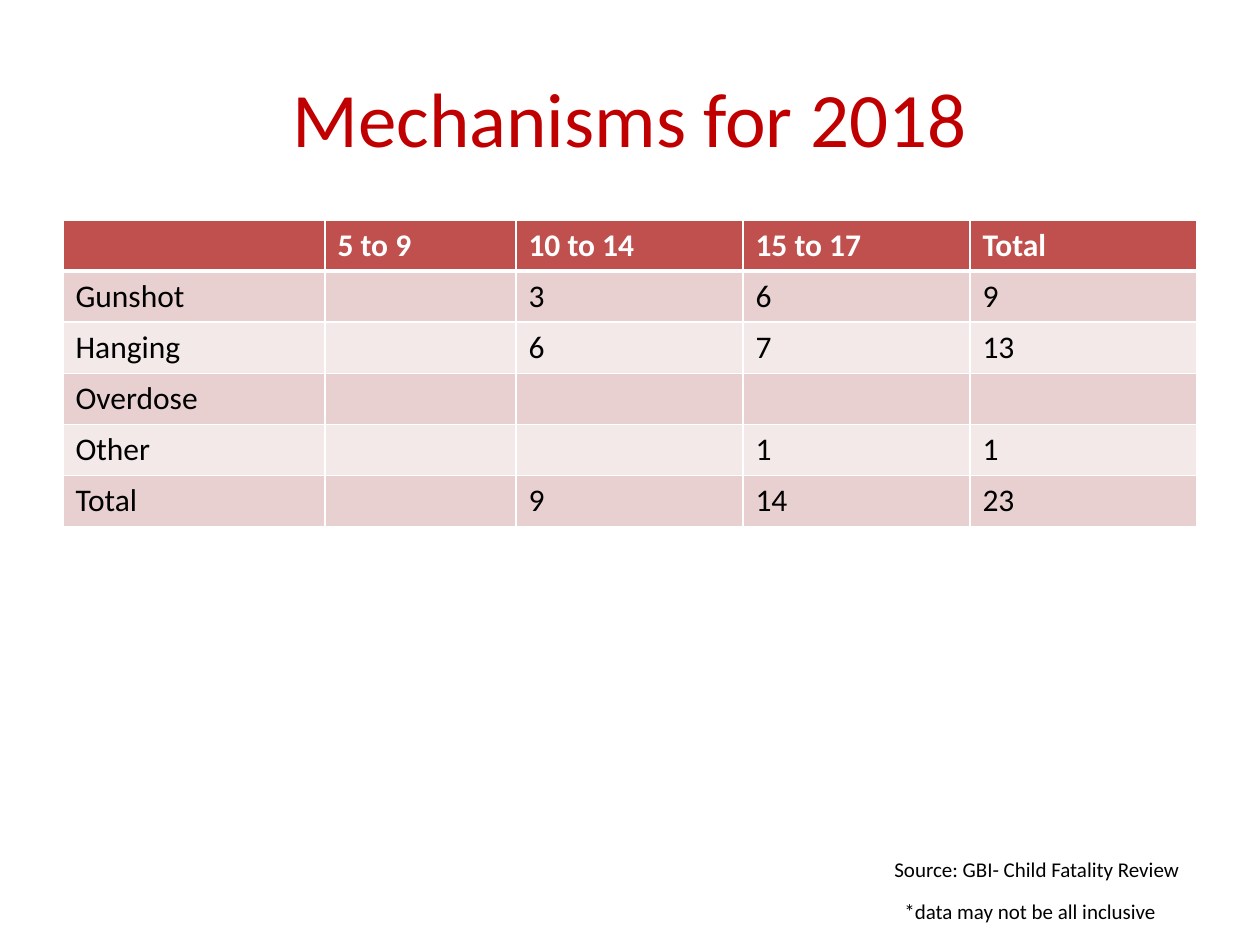
"""Build the slide tabulating mechanisms by age group for 2018."""
from lxml.etree import SubElement
from pptx import Presentation
from pptx.dml.color import RGBColor
from pptx.enum.text import MSO_ANCHOR, PP_ALIGN
from pptx.oxml.ns import qn
from pptx.util import Pt

TITLE = "Mechanisms for 2018"
ROWS = [
    ("", "5 to 9", "10 to 14", "15 to 17", "Total"),
    ("Gunshot", "", "3", "6", "9"),
    ("Hanging", "", "6", "7", "13"),
    ("Overdose", "", "", "", ""),
    ("Other", "", "", "1", "1"),
    ("Total", "", "9", "14", "23"),
]
NOTES = [
    ("*data may not be all inclusive", (892, 892, 315, 38)),
    ("Source: GBI- Child Fatality Review", (882, 850, 451, 62)),
]
COLORS = {
    "title": "C00000", "header": "C0504D", "odd": "E8D0D0",
    "even": "F4E9E9", "white": "FFFFFF", "black": "000000",
}
FONT = "Calibri"
TITLE_BOX = (63, 38, 1134, 158)
TABLE_LEFT, TABLE_TOP, ROW_HEIGHT = 63, 220, 51
COLUMN_WIDTHS = (262, 191, 227, 227, 227)
SCALE = 914400 / 126


def px(length):
    return round(length * SCALE)


def rgb(name):
    return RGBColor.from_string(COLORS[name])


def style(paragraph, size, color, bold=False):
    for run in paragraph.runs:
        run.font.name = FONT
        run.font.size = Pt(size)
        run.font.bold = bold
        run.font.color.rgb = rgb(color)


def add_borders(cell, bottom_width):
    properties = cell._tc.get_or_add_tcPr()
    for side, width in (("L", 1), ("R", 1), ("T", 1), ("B", bottom_width)):
        line = SubElement(properties, qn(f"a:ln{side}"), w=str(Pt(width)))
        fill = SubElement(line, qn("a:solidFill"))
        SubElement(fill, qn("a:srgbClr"), val=COLORS["white"])


def add_title(slide):
    title = slide.shapes.title
    title.left, title.top, title.width, title.height = map(px, TITLE_BOX)
    title.text_frame.text = TITLE
    title.text_frame.vertical_anchor = MSO_ANCHOR.MIDDLE
    heading = title.text_frame.paragraphs[0]
    heading.alignment = PP_ALIGN.CENTER
    style(heading, 44, "title")


def add_mechanisms(slide):
    bounds = (TABLE_LEFT, TABLE_TOP, sum(COLUMN_WIDTHS), ROW_HEIGHT * len(ROWS))
    mechanisms = slide.shapes.add_table(
        len(ROWS), len(COLUMN_WIDTHS), *map(px, bounds)
    ).table
    for column, width in zip(mechanisms.columns, COLUMN_WIDTHS):
        column.width = px(width)
    for r, values in enumerate(ROWS):
        is_header = r == 0
        band = "header" if is_header else ("even", "odd")[r % 2]
        for c, value in enumerate(values):
            cell = mechanisms.cell(r, c)
            add_borders(cell, 3 if is_header else 1)
            cell.fill.solid()
            cell.fill.fore_color.rgb = rgb(band)
            cell.text_frame.text = value
            style(cell.text_frame.paragraphs[0], 18,
                  "white" if is_header else "black", is_header)


def add_notes(slide):
    for wording, box in NOTES:
        note = slide.shapes.add_textbox(*map(px, box)).text_frame
        note.word_wrap = True
        note.text = wording
        style(note.paragraphs[0], 12, "black")


def main():
    presentation = Presentation()
    presentation.slide_width, presentation.slide_height = px(1260), px(945)
    slide = presentation.slides.add_slide(presentation.slide_layouts[5])
    add_title(slide)
    add_mechanisms(slide)
    add_notes(slide)
    presentation.save("out.pptx")


if __name__ == "__main__":
    main()
